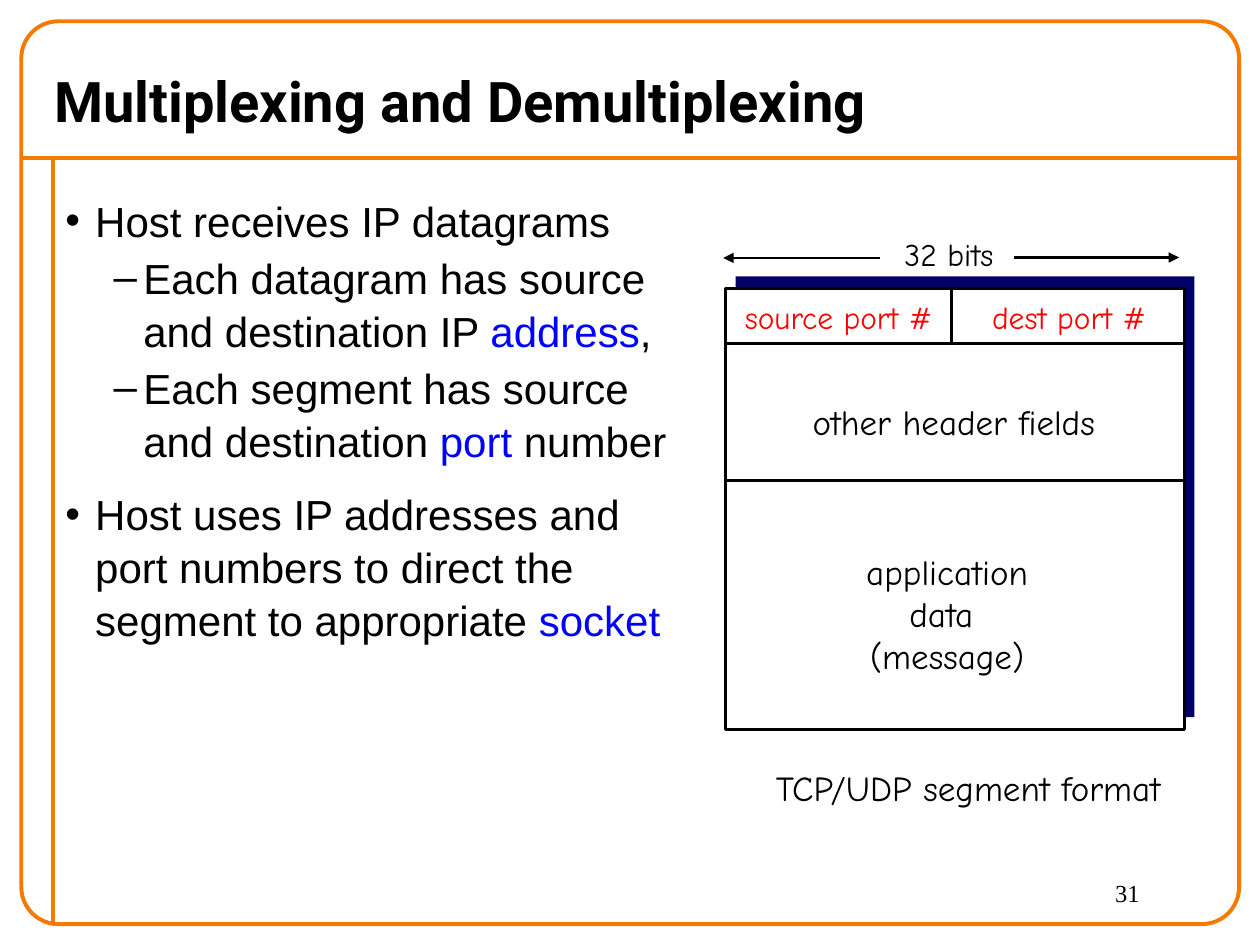
from dataclasses import dataclass

from lxml.etree import SubElement
from pptx import Presentation
from pptx.dml.color import RGBColor
from pptx.enum.shapes import MSO_CONNECTOR, MSO_SHAPE
from pptx.enum.text import MSO_ANCHOR, MSO_AUTO_SIZE, PP_ALIGN
from pptx.oxml.ns import qn
from pptx.util import Cm, Pt


@dataclass(frozen=True)
class Theme:
    """Colours, fonts and type sizes of the slide."""
    ink: str = "000000"
    paper: str = "FFFFFF"
    frame: str = "F47A00"
    shade: str = "000066"
    key: str = "0000FF"
    port: str = "FF0000"
    head: str = "Roboto"
    body: str = "Arial"
    hand: str = "Comic Neue"
    serif: str = "Times New Roman"
    title: int = 32
    main: int = 24
    label: int = 20
    small: int = 18
    page: int = 14
    thin: float = 1.5
    thick: float = 2.25


def write(para, text, font, size, color, bold=False):
    """Add one formatted run to a paragraph."""
    run = para.add_run()
    run.text = text
    run.font.name = font
    run.font.size = Pt(size)
    run.font.bold = bold
    run.font.color.rgb = RGBColor.from_string(color)


class Page:
    """Draws elements on the current slide in one theme, measured in cm."""

    def __init__(self, slide, theme):
        """Keep the slide and its theme."""
        self.slide = slide
        self.theme = theme

    def rect(self, box, fill=None, line=None, width=None, round=None):
        """Draw a plain or rounded rectangle."""
        kind = MSO_SHAPE.ROUNDED_RECTANGLE if round else MSO_SHAPE.RECTANGLE
        shape = self.slide.shapes.add_shape(kind, *map(Cm, box))
        shape.shadow.inherit = False
        if round:
            shape.adjustments[0] = round
        if fill:
            shape.fill.solid()
            shape.fill.fore_color.rgb = RGBColor.from_string(fill)
        else:
            shape.fill.background()
        if line:
            shape.line.color.rgb = RGBColor.from_string(line)
            shape.line.width = Pt(width)
        else:
            shape.line.fill.background()

    def line(self, start, end, color=None, width=None, arrow=False):
        """Draw a straight line, with an arrowhead at its end if asked."""
        link = self.slide.shapes.add_connector(
            MSO_CONNECTOR.STRAIGHT, *map(Cm, (*start, *end)))
        link.line.color.rgb = RGBColor.from_string(color or self.theme.ink)
        link.line.width = Pt(width or self.theme.thin)
        if arrow:
            SubElement(link.line._get_or_add_ln(), qn("a:tailEnd"), type="triangle")
        SubElement(link._element.spPr, qn("a:effectLst"))

    def frame(self, box, wrap=True):
        """Add an empty text box and return its text frame."""
        area = self.slide.shapes.add_textbox(*map(Cm, box)).text_frame
        area.word_wrap = wrap
        return area

    def text(self, box, text, font, size, color=None, bold=False):
        """Place a single left-aligned line, centred vertically if bold."""
        area = self.frame(box)
        if bold:
            area.vertical_anchor = MSO_ANCHOR.MIDDLE
        write(area.paragraphs[0], text, font, size, color or self.theme.ink, bold)

    def label(self, box, *lines, size=None, color=None):
        """Place centred handwritten lines that do not wrap."""
        area = self.frame(box, wrap=False)
        area.auto_size = MSO_AUTO_SIZE.SHAPE_TO_FIT_TEXT
        for i, text in enumerate(lines):
            para = area.add_paragraph() if i else area.paragraphs[0]
            para.alignment = PP_ALIGN.CENTER
            write(para, text, self.theme.hand, size or self.theme.label,
                  color or self.theme.ink)

    def list(self, box, items):
        """Place a two-level bullet list whose odd runs are highlighted."""
        look = self.theme
        area = self.frame(box)
        for i, (level, *runs) in enumerate(items):
            para = area.add_paragraph() if i else area.paragraphs[0]
            para.level = level
            para.line_spacing = 1.05
            para.space_before = Pt((12, 2.4)[level] if i else 0)
            props = para._p.get_or_add_pPr()
            props.set("marL", str(Cm((0.6, 1.57)[level])))
            props.set("indent", str(-Cm(0.6)))
            SubElement(props, qn("a:buFont"), typeface=look.body)
            SubElement(props, qn("a:buChar"), char="•–"[level])
            for n, text in enumerate(runs):
                write(para, text, look.body, look.main, look.key if n % 2 else look.ink)


def main():
    """Build the slide and save it."""
    deck = Presentation()
    deck.slide_width, deck.slide_height = Cm(25.4), Cm(19.05)
    look = Theme()
    page = Page(deck.slides.add_slide(deck.slide_layouts[6]), look)

    edge, rule, side = 0.43, 3.18, 1.07
    page.line((edge, rule), (25.4 - edge, rule), look.frame, look.thick)
    page.line((side, rule), (side, 18.62), look.frame, look.thick)
    page.rect((edge, edge, 24.55, 18.2), line=look.frame, width=look.thick, round=0.041)
    page.text((22.23, 17.58, 2.54, 1.07), "31", look.serif, look.page)
    page.text((0.84, 1.07, 24.13, 1.9), "Multiplexing and Demultiplexing",
              look.head, look.title, bold=True)
    page.list((1.07, 3.76, 12.9, 13.97), [
        (0, "Host receives IP datagrams"),
        (1, "Each datagram has source and destination IP ", "address", ","),
        (1, "Each segment has source and destination ", "port", " number"),
        (0, "Host uses IP addresses and port numbers to direct the segment"
            " to appropriate ", "socket"),
    ])

    left, top, wide, high = 14.63, 5.82, 9.25, 8.89
    page.rect((left + 0.2, top - 0.25, wide, high), fill=look.shade)
    page.rect((left, top, wide, high), look.paper, look.ink, look.thin)
    ports, fields, split = 6.93, 9.68, 19.18
    for y in (ports, fields):
        page.line((left, y), (left + wide, y))
    page.line((split, ports), (split, top))
    page.line((20.45, 5.19), (23.77, 5.19), arrow=True)
    page.line((17.73, 5.2), (14.58, 5.2), arrow=True)

    page.label((17.81, 4.62, 2.64, 1.02), "32 bits", size=look.small)
    page.label((14.58, 5.89, 4.65, 1.02), "source port #", size=look.small, color=look.port)
    page.label((19.53, 5.89, 4.04, 1.02), "dest port #", size=look.small, color=look.port)
    page.label((15.75, 7.95, 6.96, 1.09), "other header fields")
    page.label((17.09, 10.97, 4.01, 2.79), "application", "data ", "(message)")
    page.label((15.01, 15.32, 9.02, 1.09), "TCP/UDP segment format")
    deck.save("out.pptx")


if __name__ == "__main__":
    main()
